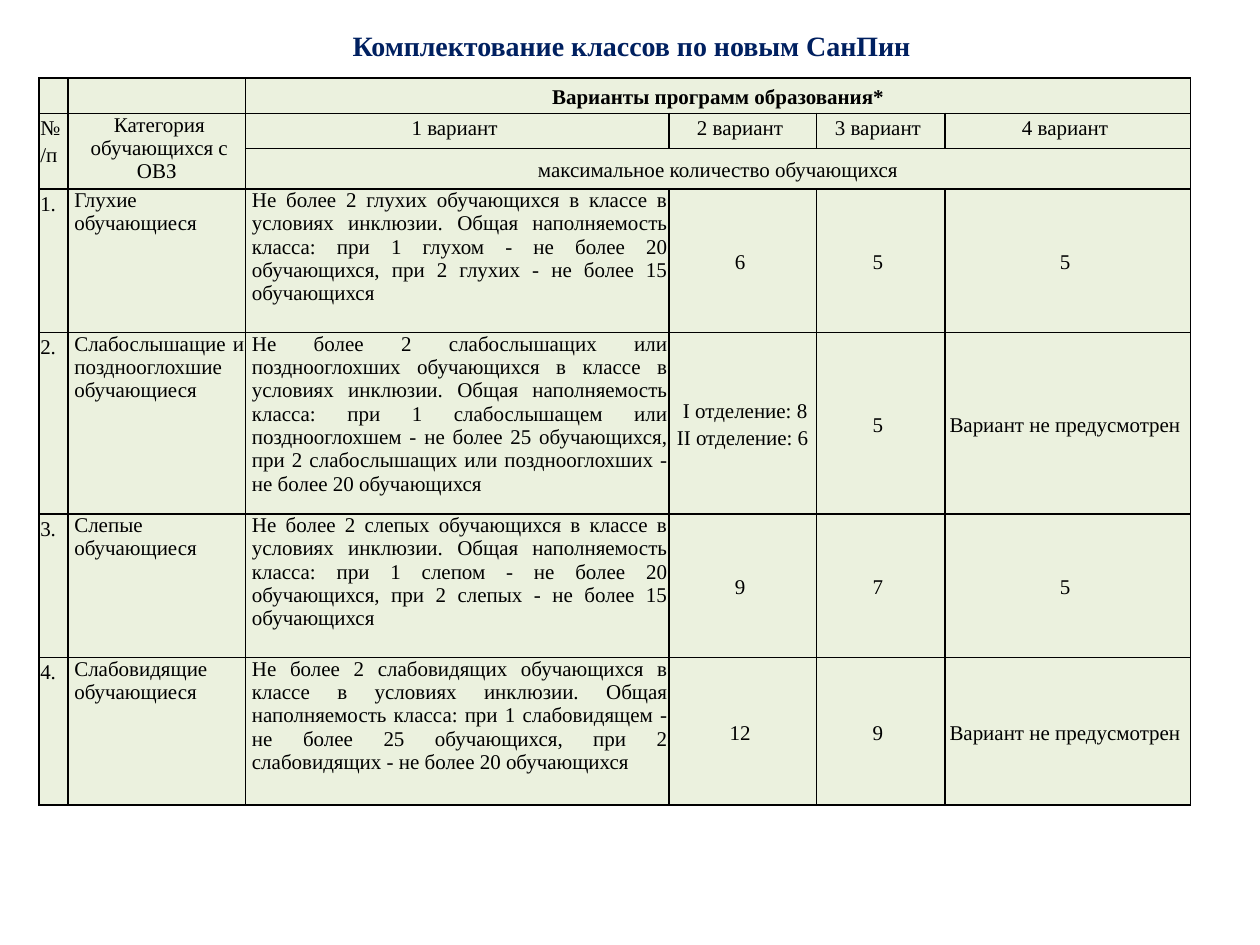
from pptx import Presentation
from pptx.dml.color import RGBColor
from pptx.enum.text import MSO_ANCHOR as Anchor, PP_ALIGN as Align
from pptx.oxml import parse_xml
from pptx.oxml.ns import nsdecls
from pptx.util import Inches, Pt

NAVY = RGBColor(0x00, 0x20, 0x60)
BLACK = RGBColor(0, 0, 0)
PALE = RGBColor(0xEB, 0xF1, 0xDE)
FACE = "Times New Roman"

COLS = [0.23, 1.41, 3.36, 1.17, 1.02, 1.95]
ROWS = [0.28, 0.28, 0.32, 1.14, 1.44, 1.14, 1.17]
NONE = "Вариант не предусмотрен "

# Category, first variant, then the other three variants
DATA = [
    ("Глухие обучающиеся ",
     "Не более 2 глухих обучающихся в классе в условиях инклюзии. "
     "Общая наполняемость класса: при 1 глухом - не более 20 обучающихся, "
     "при 2 глухих - не более 15 обучающихся ",
     "6 ", "5 ", "5 "),
    ("Слабослышащие и позднооглохшие обучающиеся ",
     "Не более 2 слабослышащих или позднооглохших обучающихся в классе "
     "в условиях инклюзии. Общая наполняемость класса: при 1 слабослышащем "
     "или позднооглохшем - не более 25 обучающихся, при 2 слабослышащих "
     "или позднооглохших - не более 20 обучающихся ",
     "I отделение: 8 II отделение: 6 ", "5 ", NONE),
    ("Слепые обучающиеся ",
     "Не более 2 слепых обучающихся в классе в условиях инклюзии. "
     "Общая наполняемость класса: при 1 слепом - не более 20 обучающихся, "
     "при 2 слепых - не более 15 обучающихся ",
     "9 ", "7 ", "5 "),
    ("Слабовидящие обучающиеся ",
     "Не более 2 слабовидящих обучающихся в классе в условиях инклюзии. "
     "Общая наполняемость класса: при 1 слабовидящем - не более 25 "
     "обучающихся, при 2 слабовидящих - не более 20 обучающихся ",
     "12 ", "9 ", NONE),
]


def style(para, size, color, bold, align, lead):
    font = para.font
    font.name, font.size, font.bold = FACE, Pt(size), bold
    font.color.rgb = color
    para.alignment, para.line_spacing = align, lead


def add_title(slide, text):
    box = slide.shapes.add_textbox(
        Inches(1.33), Inches(0.23), Inches(7.42), Inches(0.31))
    frame = box.text_frame
    frame.word_wrap = True
    frame.vertical_anchor = Anchor.BOTTOM
    frame.text = text
    style(frame.paragraphs[0], 16, NAVY, True, Align.CENTER, 1.2)


def add_grid(slide):
    grid = slide.shapes.add_table(
        len(ROWS), len(COLS), Inches(0.31), Inches(0.62),
        Inches(sum(COLS)), Inches(sum(ROWS))).table
    for col, width in zip(grid.columns, COLS):
        col.width = Inches(width)
    for row, height in zip(grid.rows, ROWS):
        row.height = Inches(height)
    for cell in grid.iter_cells():
        dress(cell)
    return grid


def dress(cell):
    """Give a cell its margins, black borders, fill and small font."""
    cell.margin_left = cell.margin_right = Inches(0.01)
    cell.margin_top = cell.margin_bottom = 0
    props = cell._tc.get_or_add_tcPr()
    for side in ("lnL", "lnR", "lnT", "lnB"):
        props.append(parse_xml(
            f'<a:{side} {nsdecls("a")} w="{Pt(1)}"><a:solidFill>'
            f'<a:srgbClr val="{BLACK}"/></a:solidFill></a:{side}>'))
    cell.fill.solid()
    cell.fill.fore_color.rgb = PALE
    para = cell.text_frame.paragraphs[0]
    style(para, 12, BLACK, False, Align.LEFT, 1.0)
    end = para._p.get_or_add_endParaRPr()
    end.set("sz", "1200")


def put(cell, text, align=Align.CENTER, lead=1.15, mid=False, bold=False,
        after=0, indent=0):
    cell.text = text
    cell.vertical_anchor = Anchor.MIDDLE if mid else Anchor.TOP
    para = cell.text_frame.paragraphs[0]
    style(para, 12, BLACK, bold, align, lead)
    para.space_after = Pt(after)
    if indent:
        para._p.get_or_add_pPr().set("marL", str(Inches(indent)))


def fill_head(grid):
    for first, last in (((0, 2), (0, 5)), ((1, 0), (2, 0)),
                        ((1, 1), (2, 1)), ((2, 2), (2, 5))):
        grid.cell(*first).merge(grid.cell(*last))
    put(grid.cell(0, 2), "Варианты программ образования*",
        mid=True, bold=True, after=10)
    put(grid.cell(1, 0), "№  /п", Align.LEFT)
    put(grid.cell(1, 1), "Категория обучающихся с ОВЗ ", lead=1.0, indent=0.04)
    for num in range(1, 5):
        put(grid.cell(1, num + 1), f"{num} вариант ")
    put(grid.cell(2, 2), "максимальное количество обучающихся",
        mid=True, after=10)


def fill_body(grid):
    for num, (*texts, two, three, four) in enumerate(DATA, 1):
        row = num + 2
        put(grid.cell(row, 0), f"{num}.", Align.LEFT)
        for col, text in enumerate(texts, 1):
            put(grid.cell(row, col), text, Align.JUSTIFY, 1.0, indent=0.04)
        for col, text in enumerate((two, three, four), 3):
            put(grid.cell(row, col), text, mid=True,
                indent=0.04 if "отделение" in text else 0)


def main():
    deck = Presentation()
    deck.slide_width, deck.slide_height = Inches(10), Inches(7.5)
    slide = deck.slides.add_slide(deck.slide_layouts[6])
    # Table
    grid = add_grid(slide)
    fill_head(grid)
    fill_body(grid)
    # Title
    add_title(slide, "Комплектование классов по новым СанПин ")
    deck.save("out.pptx")


if __name__ == "__main__":
    main()
